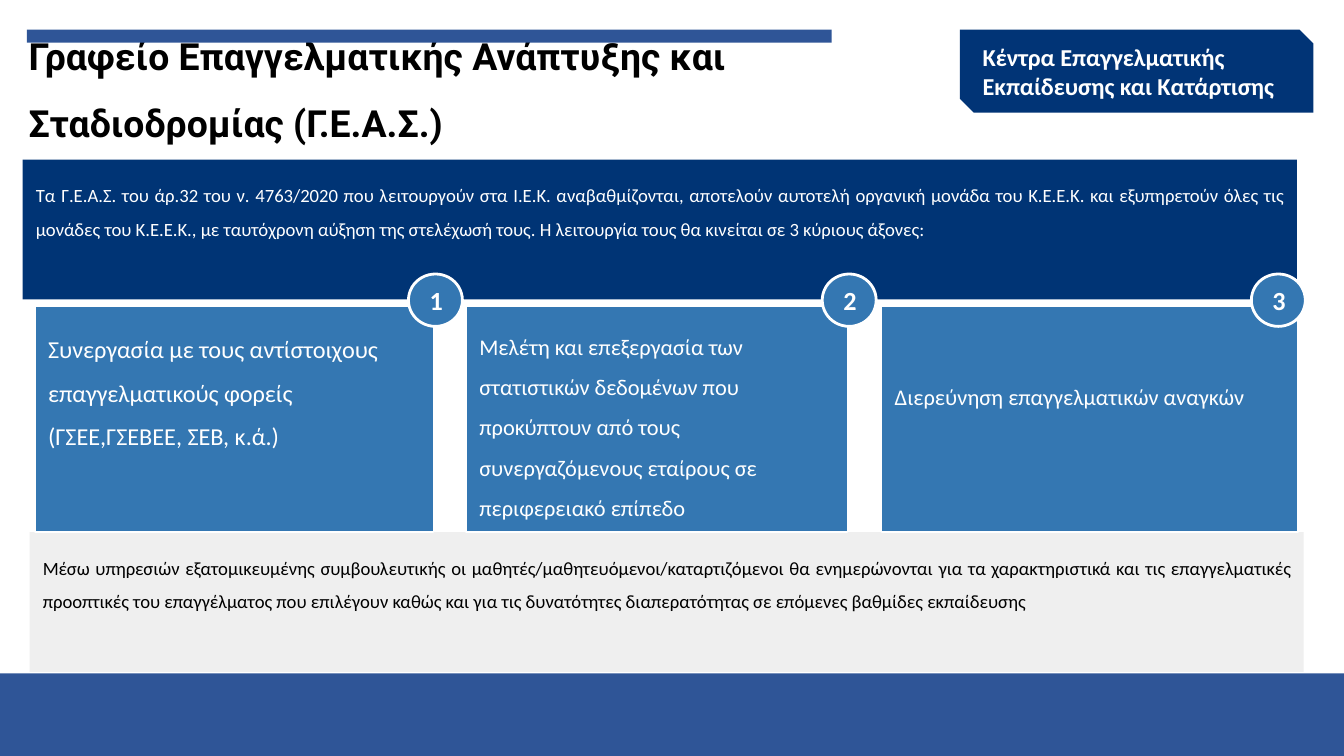
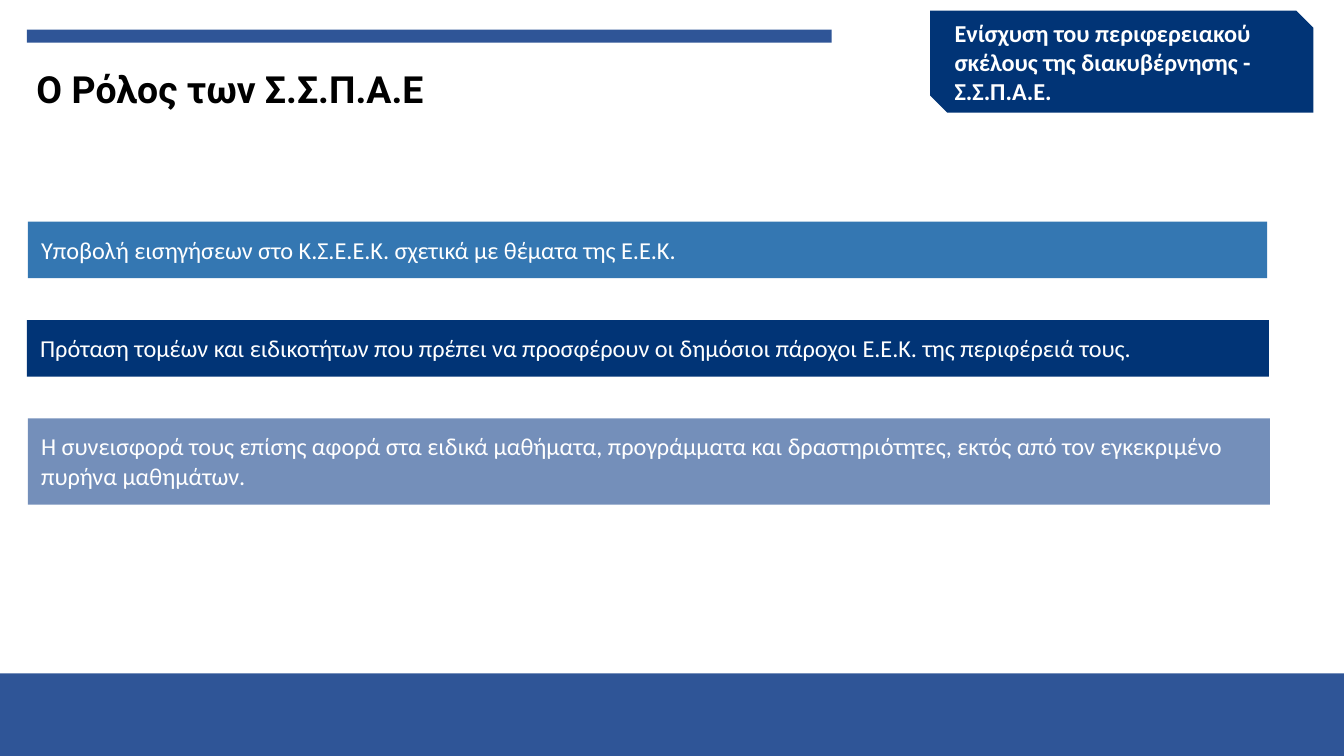
from dataclasses import dataclass

from pptx import Presentation
from pptx.dml.color import RGBColor
from pptx.enum.shapes import MSO_SHAPE as Shape
from pptx.enum.text import MSO_ANCHOR as Anchor, PP_ALIGN as Align
from pptx.util import Cm, Pt


@dataclass(frozen=True)
class Theme:
    band: str = "2F5597"
    navy: str = "013476"
    deep_navy: str = "003475"
    blue: str = "3477B2"
    mist: str = "748FBA"
    grey: str = "EFEFEF"
    white: str = "FFFFFF"
    black: str = "000000"
    title_font: str = "Roboto"
    body_font: str = "Calibri"
    title_size: int = 20
    badge_size: int = 14
    text_size: int = 13
    card_size: int = 12
    note_size: int = 10


T = Theme()

# All positions and lengths are in centimetres.
WIDTH, HEIGHT = 25.4, 14.29
FOOTER_TOP = 12.73
TAG_RIGHT, TAG_BOTTOM = 24.82, 2.13
PANEL_SIZE = (24.08, 2.64)
CARD_TOP, CARD_HEIGHT = 5.79, 4.27
BADGE_TOP, BADGE_SIZE = 5.18, (1.02, 0.99)
BAR_TOP, BAR_STEP = 4.19, 1.86

OFFICE = {
    "title": "Γραφείο Επαγγελματικής Ανάπτυξης και Σταδιοδρομίας (Γ.Ε.Α.Σ.)",
    "title_box": (0.36, 0.1, 17.93, 2.62),
    "title_spacing": 1.5,
    "tag": "Κέντρα Επαγγελματικής Εκπαίδευσης και Κατάρτισης",
    "tag_size": (6.68, 1.57),
}
# left, top, fill, text colour, text
PANELS = [
    (0.56, 10.06, T.grey, T.black,
     "Μέσω υπηρεσιών εξατομικευμένης συμβουλευτικής οι μαθητές/μαθητευόμενοι/"
     "καταρτιζόμενοι θα ενημερώνονται για τα χαρακτηριστικά και τις "
     "επαγγελματικές προοπτικές του επαγγέλματος που επιλέγουν καθώς και για "
     "τις δυνατότητες διαπερατότητας σε επόμενες βαθμίδες εκπαίδευσης"),
    (0.43, 3.02, T.deep_navy, T.white,
     "Τα Γ.Ε.Α.Σ. του άρ.32 του ν. 4763/2020 που λειτουργούν στα Ι.Ε.Κ. "
     "αναβαθμίζονται, αποτελούν αυτοτελή οργανική μονάδα του Κ.Ε.Ε.Κ. και "
     "εξυπηρετούν όλες τις μονάδες του Κ.Ε.Ε.Κ., με ταυτόχρονη αύξηση της "
     "στελέχωσή τους. Η λειτουργία τους θα κινείται σε 3 κύριους άξονες:"),
]
# left, width, badge left, text size, top inset, alignment, text
AXES = [
    (0.66, 7.54, 7.72, T.text_size, 0.25, Align.LEFT,
     "Συνεργασία με τους αντίστοιχους επαγγελματικούς φορείς "
     "(ΓΣΕΕ,ΓΣΕΒΕΕ, ΣΕΒ, κ.ά.)"),
    (8.81, 7.21, 15.54, T.card_size, 0.25, Align.LEFT,
     "Μελέτη και επεξεργασία των στατιστικών δεδομένων που προκύπτουν από "
     "τους συνεργαζόμενους εταίρους σε περιφερειακό επίπεδο"),
    (16.66, 7.87, 23.65, T.card_size, 1.19, Align.JUSTIFY,
     "Διερεύνηση επαγγελματικών αναγκών"),
]

ROLE = {
    "title": "Ο Ρόλος των Σ.Σ.Π.Α.Ε",
    "title_box": (0.51, 1.02, 17.93, 1.14),
    "title_spacing": 1.15,
    "tag": "Ενίσχυση του περιφερειακού σκέλους της διακυβέρνησης - Σ.Σ.Π.Α.Ε.",
    "tag_size": (7.24, 1.93),
}
# left, width, height, fill, text
BARS = [
    (0.53, 23.42, 1.07, T.blue,
     "Υποβολή εισηγήσεων στο Κ.Σ.Ε.Ε.Κ. σχετικά με θέματα της Ε.Ε.Κ."),
    (0.51, 23.47, 1.07, T.navy,
     "Πρόταση τομέων και ειδικοτήτων που πρέπει να προσφέρουν οι δημόσιοι "
     "πάροχοι Ε.Ε.Κ. της περιφέρειά τους."),
    (0.53, 23.47, 1.63, T.mist,
     "Η συνεισφορά τους επίσης αφορά στα ειδικά μαθήματα, προγράμματα και "
     "δραστηριότητες, εκτός από τον εγκεκριμένο πυρήνα μαθημάτων."),
]


def rgb(value):
    return RGBColor.from_string(value)


def add_box(s, box, fill, kind=Shape.RECTANGLE, line_width=None):
    """Add a flat filled shape, with a white outline if line_width is given."""
    sp = s.shapes.add_shape(kind, *map(Cm, box))
    sp.shadow.inherit = False
    sp.fill.solid()
    sp.fill.fore_color.rgb = rgb(fill)
    if line_width:
        sp.line.color.rgb = rgb(T.white)
        sp.line.width = Pt(line_width)
    else:
        sp.line.fill.background()
    return sp


def write(sp, text, size=T.text_size, color=T.white, font=T.body_font,
          bold=False, align=Align.LEFT, anchor=Anchor.TOP, spacing=1.0,
          inset=(0.25, 0.25), top=None):
    """Fill sp with one paragraph; inset is (sides, top and bottom)."""
    tf = sp.text_frame
    tf.word_wrap = True
    tf.vertical_anchor = anchor
    tf.margin_left = tf.margin_right = Cm(inset[0])
    tf.margin_top = tf.margin_bottom = Cm(inset[1])
    if top is not None:
        tf.margin_top = Cm(top)
    p = tf.paragraphs[0]
    p.alignment = align
    p.line_spacing = spacing
    r = p.add_run()
    r.text = text
    r.font.name = font
    r.font.size = Pt(size)
    r.font.bold = bold
    r.font.color.rgb = rgb(color)


def add_base(prs, content):
    """Add a slide with the footer band, title, rule and corner tag."""
    s = prs.slides.add_slide(prs.slide_layouts[6])
    add_box(s, (0, FOOTER_TOP, WIDTH, HEIGHT - FOOTER_TOP), T.band)
    title = s.shapes.add_textbox(*map(Cm, content["title_box"]))
    write(title, content["title"], size=T.title_size, color=T.black,
          font=T.title_font, bold=True, spacing=content["title_spacing"],
          inset=(0.18, 0.1))
    add_box(s, (0.51, 0.56, 15.21, 0.25), T.band)
    w, h = content["tag_size"]
    tag = add_box(s, (TAG_RIGHT - w, TAG_BOTTOM - h, w, h), T.navy,
                  Shape.SNIP_2_DIAG_RECTANGLE)
    tag.adjustments[0], tag.adjustments[1] = 0, 0.167
    write(tag, content["tag"], bold=True, anchor=Anchor.MIDDLE,
          inset=(0.3, 0.05))
    return s


def add_office_slide(prs):
    s = add_base(prs, OFFICE)
    for left, top, fill, color, text in PANELS:
        panel = add_box(s, (left, top, *PANEL_SIZE), fill)
        write(panel, text, size=T.note_size, color=color,
              align=Align.JUSTIFY, spacing=1.5)
    for left, width, _, size, top, align, text in AXES:
        card = add_box(s, (left, CARD_TOP, width, CARD_HEIGHT), T.blue,
                       line_width=0.75)
        write(card, text, size=size, align=align, spacing=1.5, top=top)
    for number, axis in enumerate(AXES, 1):
        badge = add_box(s, (axis[2], BADGE_TOP, *BADGE_SIZE), T.blue,
                        Shape.OVAL, line_width=1.5)
        write(badge, str(number), size=T.badge_size, bold=True,
              align=Align.CENTER, anchor=Anchor.MIDDLE, inset=(0.25, 0.13))


def add_role_slide(prs):
    s = add_base(prs, ROLE)
    for i, (left, width, height, fill, text) in enumerate(BARS):
        bar = add_box(s, (left, BAR_TOP + i * BAR_STEP, width, height), fill)
        write(bar, text)


def main():
    prs = Presentation()
    prs.slide_width, prs.slide_height = Cm(WIDTH), Cm(HEIGHT)
    add_office_slide(prs)
    add_role_slide(prs)
    prs.save("out.pptx")


if __name__ == "__main__":
    main()
